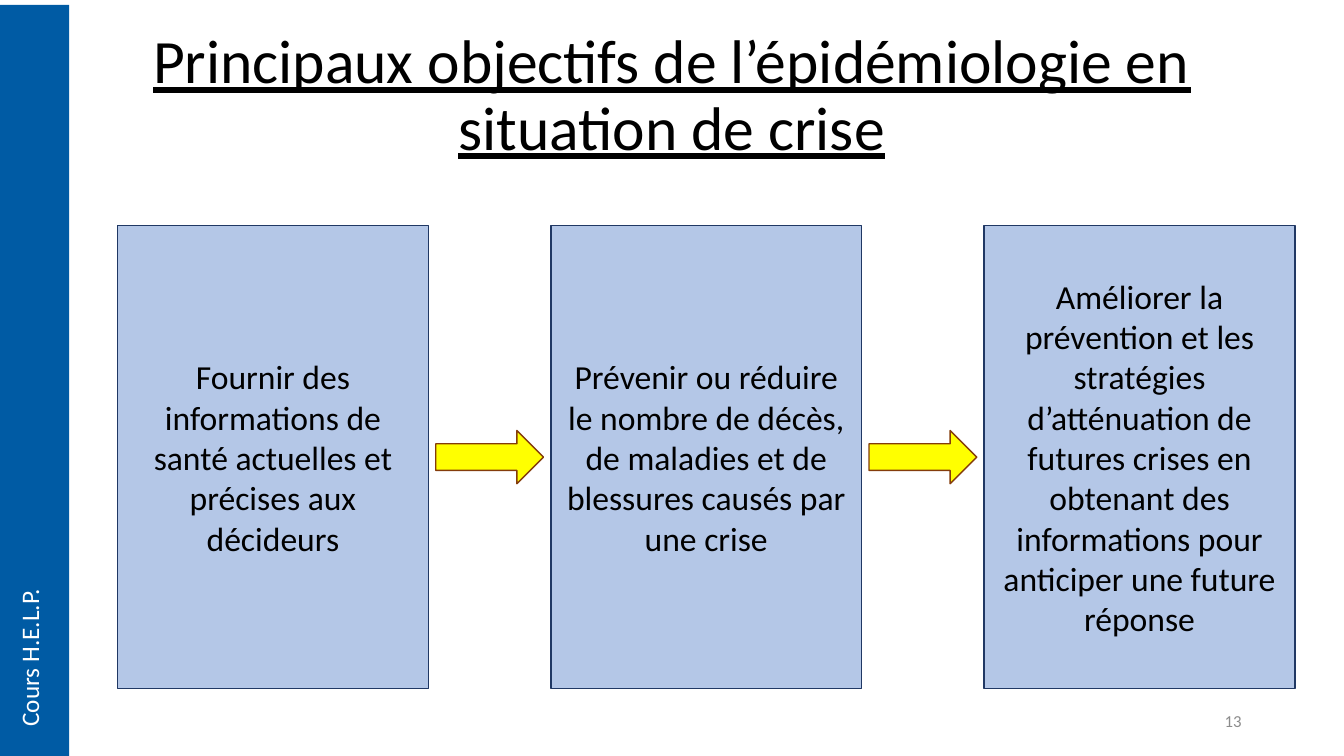
import pptx
import pptx.util
import pptx.dml.color
import pptx.enum.shapes
import pptx.enum.text

Pt = pptx.util.Pt
SHAPE = pptx.enum.shapes.MSO_SHAPE
ALIGN = pptx.enum.text.PP_ALIGN
ANCHOR = pptx.enum.text.MSO_ANCHOR

COLORS = {
    "ink": "000000", "white": "FFFFFF", "bar": "005BA4", "card": "B4C7E7",
    "edge": "203864", "arrow": "FFFF00", "rim": "843C0B", "page": "8C8C8C",
}
GOALS = [
    "Fournir des informations de santé actuelles et précises aux décideurs",
    "Prévenir ou réduire le nombre de décès, de maladies et de blessures "
    "causés par une crise",
    "Améliorer la prévention et les stratégies d’atténuation de futures "
    "crises en obtenant des informations pour anticiper une future réponse",
]


def shade(name):
    return pptx.dml.color.RGBColor.from_string(COLORS[name])


def write(shape, text, size, color="ink", align=ALIGN.CENTER):
    """Fill a shape with one vertically centred paragraph and return it."""
    frame = shape.text_frame
    frame.word_wrap = True
    frame.vertical_anchor = ANCHOR.MIDDLE
    frame.text = text
    para = frame.paragraphs[0]
    para.alignment = align
    font = para.runs[0].font
    font.name = "Calibri"
    font.size = Pt(size)
    font.color.rgb = shade(color)
    return para


def block(slide, kind, box, fill, line=None):
    shape = slide.shapes.add_shape(kind, *map(Pt, box))
    shape.shadow.inherit = False
    shape.fill.solid()
    shape.fill.fore_color.rgb = shade(fill)
    if line:
        shape.line.color.rgb = shade(line)
        shape.line.width = Pt(1)
    else:
        shape.line.fill.background()
    return shape


def title(slide, box):
    label = slide.shapes.add_textbox(*map(Pt, box))
    para = write(label, "Principaux objectifs de l’épidémiologie en "
                 "situation de crise", 44)
    para.line_spacing = 0.9
    para.runs[0].font.underline = True


def sidebar(slide, box):
    """Draw the side bar with the course name running upwards."""
    left, top, width, height = box
    block(slide, SHAPE.RECTANGLE, box, "bar")
    spot = (left + 6.5, top + height - 128, 36, 114)
    label = slide.shapes.add_textbox(*map(Pt, spot))
    write(label, "Cours H.E.L.P.", 18, "white", ALIGN.LEFT)
    frame = label.text_frame
    frame.word_wrap = False
    frame.vertical_anchor = ANCHOR.TOP
    frame._txBody.bodyPr.set("vert", "vert270")


def flow(slide, box):
    """Spread the goals over the box, with an arrow in each gap."""
    left, top, width, height = box
    card, arrow, thick = 222, 77, 38
    step = (width - card) / (len(GOALS) - 1)
    inset = (step - card - arrow) / 2
    for i, goal in enumerate(GOALS):
        x = left + i * step
        shape = block(slide, SHAPE.RECTANGLE, (x, top, card, height),
                      "card", "edge")
        write(shape, goal, 24)
        if i < len(GOALS) - 1:
            spot = (x + card + inset, top + (height - thick) / 2, arrow, thick)
            block(slide, SHAPE.RIGHT_ARROW, spot, "arrow", "rim")


def footer(slide, box):
    label = slide.shapes.add_textbox(*map(Pt, box))
    write(label, "13", 12, "page", ALIGN.RIGHT)


def main():
    deck = pptx.Presentation()
    deck.slide_width, deck.slide_height = Pt(960), Pt(540)
    slide = deck.slides.add_slide(deck.slide_layouts[6])
    title(slide, (66, 17, 828, 104.5))
    sidebar(slide, (0, 3.5, 49.5, 536.5))
    flow(slide, (84, 161, 841, 331))
    footer(slide, (678, 500.5, 216, 29))
    deck.save("out.pptx")


if __name__ == "__main__":
    main()
